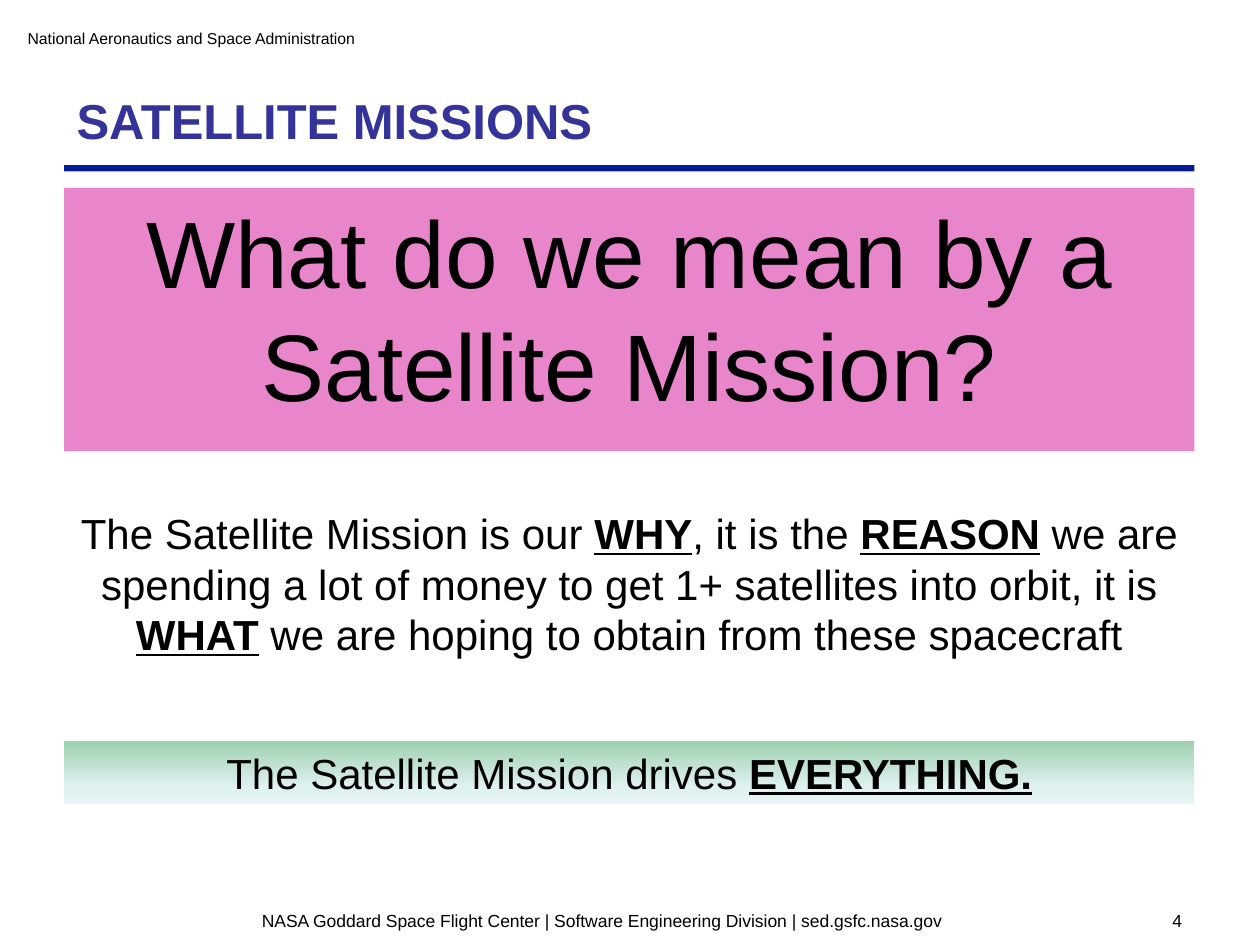
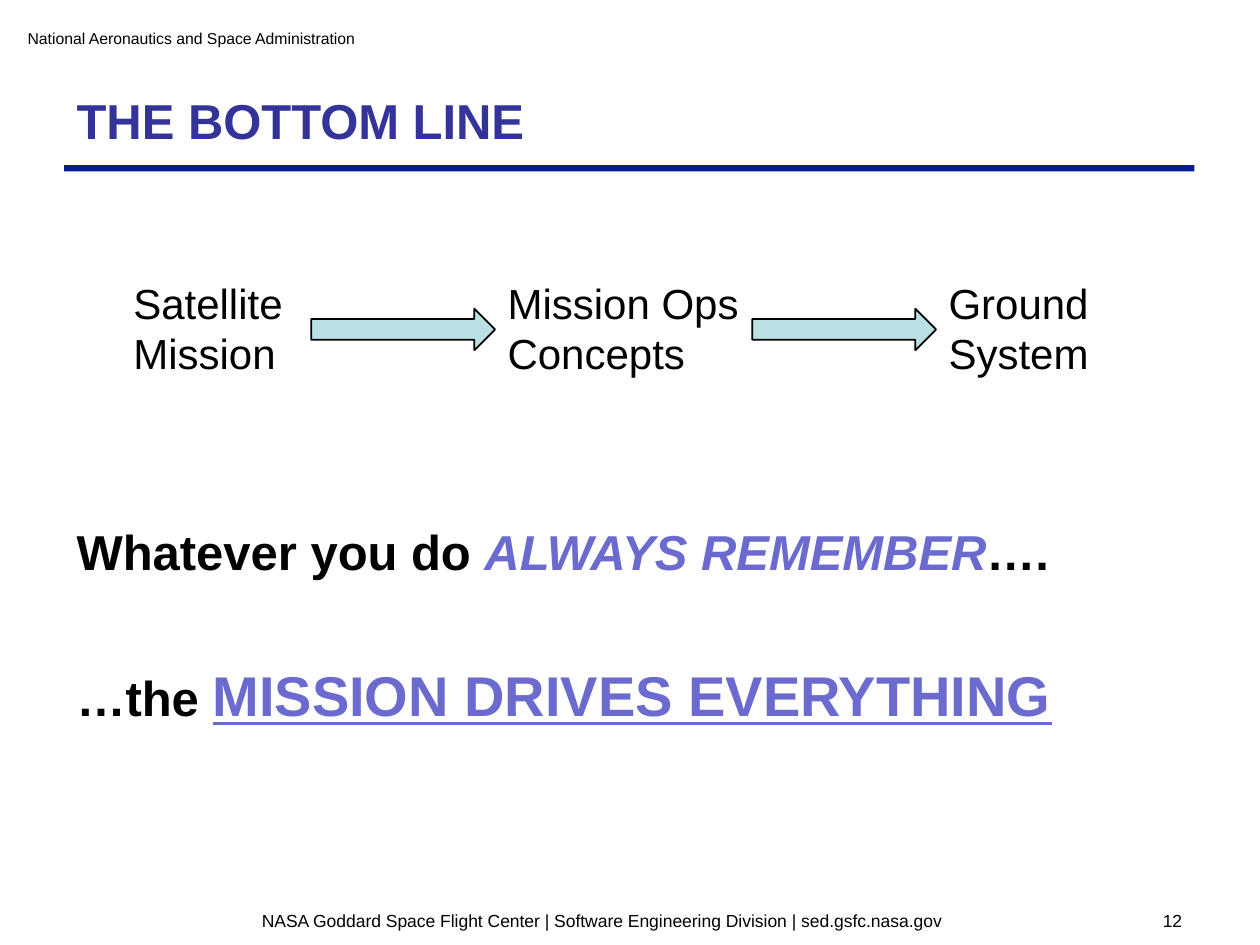
from dataclasses import dataclass
from copy import deepcopy

from lxml.etree import SubElement
from pptx import Presentation
from pptx.dml.color import RGBColor
from pptx.enum.shapes import MSO_SHAPE
from pptx.enum.text import MSO_ANCHOR, PP_ALIGN
from pptx.oxml.ns import qn
from pptx.util import Inches, Pt


@dataclass(frozen=True)
class Theme:
    font: str = "Arial"
    ink: str = "000000"
    title: str = "333399"
    rule: str = "071B94"
    question: str = "D20C99"
    accent: str = "6B6BCF"
    arrow: str = "BBE0E3"
    fade: tuple = ((0, "9ED1AD"), (74, "E0F1F2"), (83, "E0F1F2"), (100, "EBF6F7"))
    header_size: int = 9
    footer_size: int = 10
    body_size: int = 24
    title_size: int = 28
    punch_size: int = 32
    question_size: int = 54


THEME = Theme()
UNIT = Inches(0.1)
LEFT, FULL = 5.1, 89.7
FOOTER_TOP, FOOTER_HEIGHT, FOOTER_WIDTH = 71.7, 2.6, 85.3
STRONG = {"bold": True, "underline": True}


def area(column, row, columns, rows):
    return [round(length * UNIT) for length in (column, row, columns, rows)]


def write_spans(para, spans, size, color=THEME.ink, **base):
    for words, style in spans:
        look = {"size": size, "color": color, **base, **style}
        span = para.add_run()
        span.text = words
        span.font.name = THEME.font
        span.font.size = Pt(look["size"])
        span.font.color.rgb = RGBColor.from_string(look["color"])
        span.font.bold = look.get("bold", False)
        span.font.italic = look.get("italic", False)
        span.font.underline = look.get("underline", False)


def fill_text(box, lines, size, align=PP_ALIGN.LEFT, anchor=MSO_ANCHOR.TOP, gap=0, **base):
    frame = box.text_frame
    frame.word_wrap = True
    frame.vertical_anchor = anchor
    for index, line in enumerate(lines):
        para = frame.add_paragraph() if index else frame.paragraphs[0]
        para.alignment = align
        if index:
            para.space_before = Pt(gap)
        write_spans(para, [(line, {})] if isinstance(line, str) else line, size, **base)
    return box


def add_text(page, place, lines, size, **options):
    return fill_text(page.shapes.add_textbox(*area(*place)), lines, size, **options)


def add_block(page, place, color, kind=MSO_SHAPE.RECTANGLE, opacity=100):
    block = page.shapes.add_shape(kind, *area(*place))
    block.shadow.inherit = False
    block.line.fill.background()
    block.fill.solid()
    block.fill.fore_color.rgb = RGBColor.from_string(color)
    if opacity < 100:
        tint = block.fill._xPr.find(qn("a:solidFill"))[0]
        SubElement(tint, qn("a:alpha")).set("val", str(opacity * 1000))
    return block


def fade_down(block, stops):
    block.fill.gradient()
    block.fill.gradient_angle = 270
    stop_list = block.fill._xPr.find(qn("a:gradFill")).find(qn("a:gsLst"))
    while len(stop_list) < len(stops):
        stop_list.append(deepcopy(stop_list[0]))
    for stop, (position, color) in zip(block.fill.gradient_stops, stops):
        stop.position = position / 100
        stop.color.rgb = RGBColor.from_string(color)


def add_arrow(page, place):
    arrow = add_block(page, place, THEME.arrow, MSO_SHAPE.RIGHT_ARROW)
    arrow.line.color.rgb = RGBColor.from_string(THEME.ink)
    arrow.line.width = Pt(1)


def add_page(deck, title, number):
    page = deck.slides.add_slide(deck.slide_layouts[6])
    add_text(page, (1.2, 0.9, 84.2, 4.2), ["National Aeronautics and Space Administration"],
             THEME.header_size, anchor=MSO_ANCHOR.MIDDLE)
    add_block(page, (LEFT, 13.1, FULL, 0.5), THEME.rule)
    heading = add_text(page, (LEFT, 5, 85.8, 7.4), [title], THEME.title_size,
                       anchor=MSO_ANCHOR.BOTTOM, color=THEME.title, bold=True)
    heading.text_frame.paragraphs[0].line_spacing = 0.9
    add_text(page, (LEFT, FOOTER_TOP, FOOTER_WIDTH, FOOTER_HEIGHT),
             ["NASA Goddard Space Flight Center | Software Engineering Division | sed.gsfc.nasa.gov"],
             THEME.footer_size, align=PP_ALIGN.CENTER)
    add_text(page, (LEFT + FOOTER_WIDTH + 0.5, FOOTER_TOP, 3.9, FOOTER_HEIGHT), [str(number)],
             THEME.footer_size, align=PP_ALIGN.RIGHT)
    return page


def build_satellite_missions(deck):
    page = add_page(deck, "SATELLITE MISSIONS", 4)
    question = add_block(page, (LEFT, 14.9, FULL, 20.9), THEME.question, opacity=50)
    fill_text(question, ["What do we mean by a Satellite Mission?"],
              THEME.question_size, align=PP_ALIGN.CENTER)
    add_text(page, (LEFT, 39.8, FULL, 13.1), [[
        ("The Satellite Mission is our ", {}), ("WHY", STRONG),
        (", it is the ", {}), ("REASON", STRONG),
        (" we are spending a lot of money to get 1+ satellites into orbit, it is ", {}),
        ("WHAT", STRONG), (" we are hoping to obtain from these spacecraft", {}),
    ]], THEME.body_size, align=PP_ALIGN.CENTER)
    conclusion = add_block(page, (LEFT, 58.8, FULL, 5), THEME.arrow)
    fade_down(conclusion, THEME.fade)
    fill_text(conclusion, [[("The Satellite Mission drives ", {}), ("EVERYTHING.", STRONG)]],
              THEME.body_size, align=PP_ALIGN.CENTER)


def build_bottom_line(deck):
    page = add_page(deck, "THE BOTTOM LINE", 12)
    for words, column, columns in (("Satellite Mission", 9.6, 15.4),
                                   ("Mission Ops Concepts", 39.3, 21.3),
                                   ("Ground System", 74.3, 15.4)):
        add_text(page, (column, 21.5, columns, 9.1), [words], THEME.body_size)
    for step in range(2):
        add_arrow(page, (24.7 + 35 * step, 24.5, 14.6, 3.3))
    add_text(page, (LEFT, 40.9, 89.8, 19.1), [
        [("Whatever you do ", {}),
         ("ALWAYS REMEMBER", {"color": THEME.accent, "italic": True}), ("….", {})],
        [("…the ", {}), ("MISSION DRIVES EVERYTHING",
                         {"size": THEME.punch_size, "color": THEME.accent, "underline": True})],
    ], THEME.title_size, gap=46, bold=True)


def main():
    deck = Presentation()
    deck.slide_width, deck.slide_height = 100 * UNIT, 75 * UNIT
    build_satellite_missions(deck)
    build_bottom_line(deck)
    deck.save("out.pptx")


if __name__ == "__main__":
    main()
